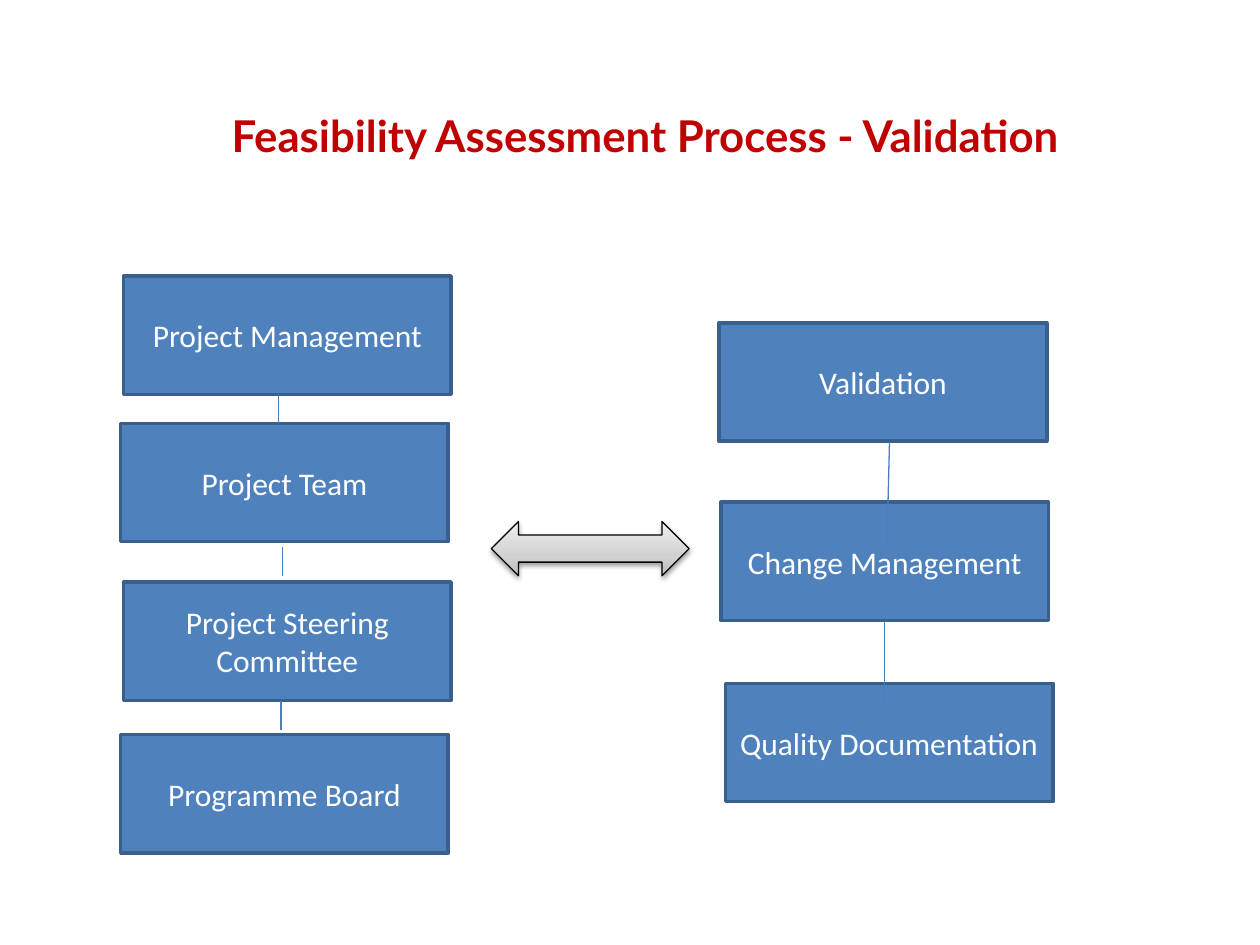
from lxml import etree
from pptx import Presentation
from pptx.dml.color import RGBColor
from pptx.enum import shapes, text
from pptx.oxml import ns
from pptx.util import Pt

RED = RGBColor(0xC0, 0x00, 0x00)
BLUE = RGBColor(0x4F, 0x81, 0xBD)
BORDER = RGBColor(0x3A, 0x5F, 0x8C)
LINK = RGBColor(0x4B, 0x7E, 0xBC)
WHITE = RGBColor(0xFF, 0xFF, 0xFF)
BLACK = RGBColor(0x00, 0x00, 0x00)
BOX_WIDTH, BOX_HEIGHT = Pt(187.2), Pt(67.7)


def add_xml(parent, tag, **attributes):
    return etree.SubElement(parent, ns.qn(tag), attributes)


deck = Presentation()
deck.slide_width, deck.slide_height = Pt(720), Pt(540)
page = deck.slides.add_slide(deck.slide_layouts[5])

# Title
title = page.shapes.title
title.left, title.top, title.width, title.height = Pt(96.5), Pt(56.9), Pt(550), Pt(35.3)
frame = title.text_frame
frame.text = "Feasibility Assessment Process - Validation "
frame.margin_left = frame.margin_right = frame.margin_top = frame.margin_bottom = 0
frame.vertical_anchor = text.MSO_ANCHOR.TOP
frame.auto_size = text.MSO_AUTO_SIZE.SHAPE_TO_FIT_TEXT
para = frame.paragraphs[0]
para.alignment = text.PP_ALIGN.CENTER
para.line_spacing = Pt(35.3)
span = para.runs[0]
span.font.name, span.font.size, span.font.bold = "Lato", Pt(25), True
span.font.color.rgb = RED

# Project roles on the left, validation steps on the right
boxes = [
    ("Project Management", 70.6, 157.7),
    ("Project Team", 69, 241.9),
    ("Project Steering Committee", 70.6, 332.6),
    ("Programme Board", 69, 419.8),
    ("Validation", 411, 184.5),
    ("Change Management", 412, 287),
    ("Quality Documentation", 414.5, 390.5),
]
for label, left, top in boxes:
    box = page.shapes.add_shape(
        shapes.MSO_SHAPE.RECTANGLE, Pt(left), Pt(top), BOX_WIDTH, BOX_HEIGHT)
    box.shadow.inherit = False
    box.fill.solid()
    box.fill.fore_color.rgb = BLUE
    box.line.color.rgb = BORDER
    box.line.width = Pt(2)
    box.text_frame.text = label
    box.text_frame.vertical_anchor = text.MSO_ANCHOR.MIDDLE
    para = box.text_frame.paragraphs[0]
    para.alignment = text.PP_ALIGN.CENTER
    span = para.runs[0]
    span.font.name, span.font.size = "Calibri", Pt(18)
    span.font.color.rgb = WHITE

# Links between the boxes
links = [
    (159, 226, 159, 242),
    (161.3, 312.5, 161.3, 329),
    (160.5, 400.5, 160.5, 417),
    (508.3, 252.7, 506.9, 309.6),
    (505.5, 355, 505.5, 401),
]
for ends in links:
    link = page.shapes.add_connector(
        shapes.MSO_CONNECTOR.STRAIGHT, *[Pt(value) for value in ends])
    link.line.color.rgb = LINK
    link.line.width = Pt(0.75)
    add_xml(link._element.spPr, "a:effectLst")

# Two-way arrow with an upward grey gradient and a soft shadow
arrow = page.shapes.add_shape(
    shapes.MSO_SHAPE.LEFT_RIGHT_ARROW, Pt(280.8), Pt(298), Pt(113), Pt(31))
arrow.shadow.inherit = False
arrow.line.color.rgb = BLACK
arrow.line.width = Pt(0.75)
arrow.fill.gradient()
arrow.fill.gradient_angle = 90
properties = arrow._element.spPr
stops = properties.find(".//" + ns.qn("a:gsLst"))
for stop in list(stops):
    stops.remove(stop)
for position, grey in ((0, "BDBDBD"), (35, "D1D1D1"), (100, "EEEEEE")):
    stop = add_xml(stops, "a:gs", pos=str(position * 1000))
    add_xml(stop, "a:srgbClr", val=grey)
shadow = add_xml(
    properties.find(ns.qn("a:effectLst")), "a:outerShdw",
    blurRad=str(Pt(3.1)), dist=str(Pt(1.6)), dir="5400000", rotWithShape="0")
tint = add_xml(shadow, "a:srgbClr", val="000000")
add_xml(tint, "a:alpha", val="38000")

deck.save("out.pptx")
